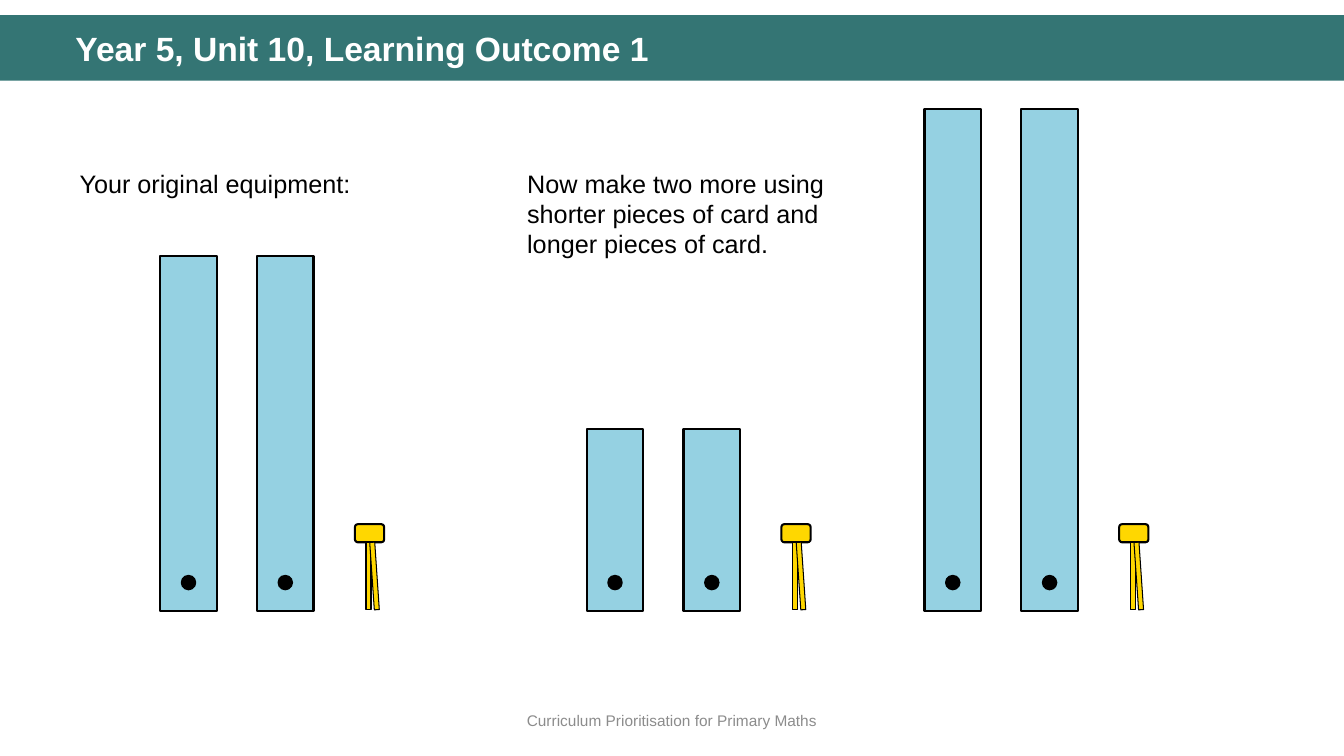
"""Build the slide showing card strips and split pins for Year 5, Unit 10."""
import pptx
import pptx.dml.color
import pptx.enum.shapes
import pptx.enum.text
import pptx.util

Inches = pptx.util.Inches
Pt = pptx.util.Pt
SHAPES = pptx.enum.shapes.MSO_SHAPE
ALIGN = pptx.enum.text.PP_ALIGN
ANCHOR = pptx.enum.text.MSO_ANCHOR


def color(hex_string):
    return pptx.dml.color.RGBColor.from_string(hex_string)


def draw(container, kind, box, fill, line_width=None, rotation=0):
    shape = container.shapes.add_shape(kind, *[Inches(value) for value in box])
    shape.shadow.inherit = False
    shape.rotation = rotation
    shape.fill.solid()
    shape.fill.fore_color.rgb = color(fill)
    if line_width is None:
        shape.line.fill.background()
    else:
        shape.line.color.rgb = color("000000")
        shape.line.width = Pt(line_width)


presentation = pptx.Presentation()
presentation.slide_width = Inches(13.33)
presentation.slide_height = Inches(7.5)
slide = presentation.slides.add_slide(presentation.slide_layouts[6])

draw(slide, SHAPES.RECTANGLE, (0, 0.15, 13.33, 0.65), "347574")

texts = [
    ("Curriculum Prioritisation for Primary Maths", (0, 6.95, 13.33, 0.4), "8C8C8C",
     {"size": Pt(11)}, {"alignment": ALIGN.CENTER}, ANCHOR.MIDDLE),
    ("Year 5, Unit 10, Learning Outcome 1", (0.65, 0.27, 12.32, 0.47), "FFFFFF",
     {"size": Pt(24), "bold": True}, {"line_spacing": 0.9}, ANCHOR.TOP),
    ("Your original equipment:", (0.69, 1.62, 3.08, 0.4), "000000",
     {"size": Pt(18)}, {}, ANCHOR.TOP),
    ("Now make two more using shorter pieces of card and longer pieces of card.",
     (5.13, 1.62, 3.18, 1.01), "000000", {"size": Pt(18)}, {}, ANCHOR.TOP),
]
for text, box, text_color, font_format, paragraph_format, anchor in texts:
    text_box = slide.shapes.add_textbox(*[Inches(value) for value in box])
    text_frame = text_box.text_frame
    text_frame.word_wrap = True
    text_frame.vertical_anchor = anchor
    paragraph = text_frame.paragraphs[0]
    for name, value in paragraph_format.items():
        setattr(paragraph, name, value)
    run = paragraph.add_run()
    run.text = text
    run.font.name = "Arial"
    run.font.color.rgb = color(text_color)
    for name, value in font_format.items():
        setattr(run.font, name, value)

STRIP_BOTTOM = 6.06
STRIP_WIDTH = 0.56
STRIP_PITCH = 0.96
HOLE_SIZE = 0.14

equipment_sets = [(1.59, 3.52), (5.82, 1.8), (9.17, 4.98)]
for left, strip_height in equipment_sets:
    group = slide.shapes.add_group_shape()
    pin_left = left + 1.93
    draw(group, SHAPES.ROUNDED_RECTANGLE, (pin_left, 5.2, 0.29, 0.18), "FFD700", 1.5)
    for offset, rotation in [(0.11, 0), (0.17, 356.1)]:
        draw(group, SHAPES.RECTANGLE, (pin_left + offset, 5.38, 0.05, 0.67),
             "FFD700", 0.75, rotation)
    for index in range(2):
        strip_left = left + index * STRIP_PITCH
        hole_left = strip_left + (STRIP_WIDTH - HOLE_SIZE) / 2
        draw(group, SHAPES.RECTANGLE,
             (strip_left, STRIP_BOTTOM - strip_height, STRIP_WIDTH, strip_height),
             "95D1E2", 1.5)
        draw(group, SHAPES.OVAL, (hole_left, 5.71, HOLE_SIZE, HOLE_SIZE), "000000", 1)

presentation.save("out.pptx")
